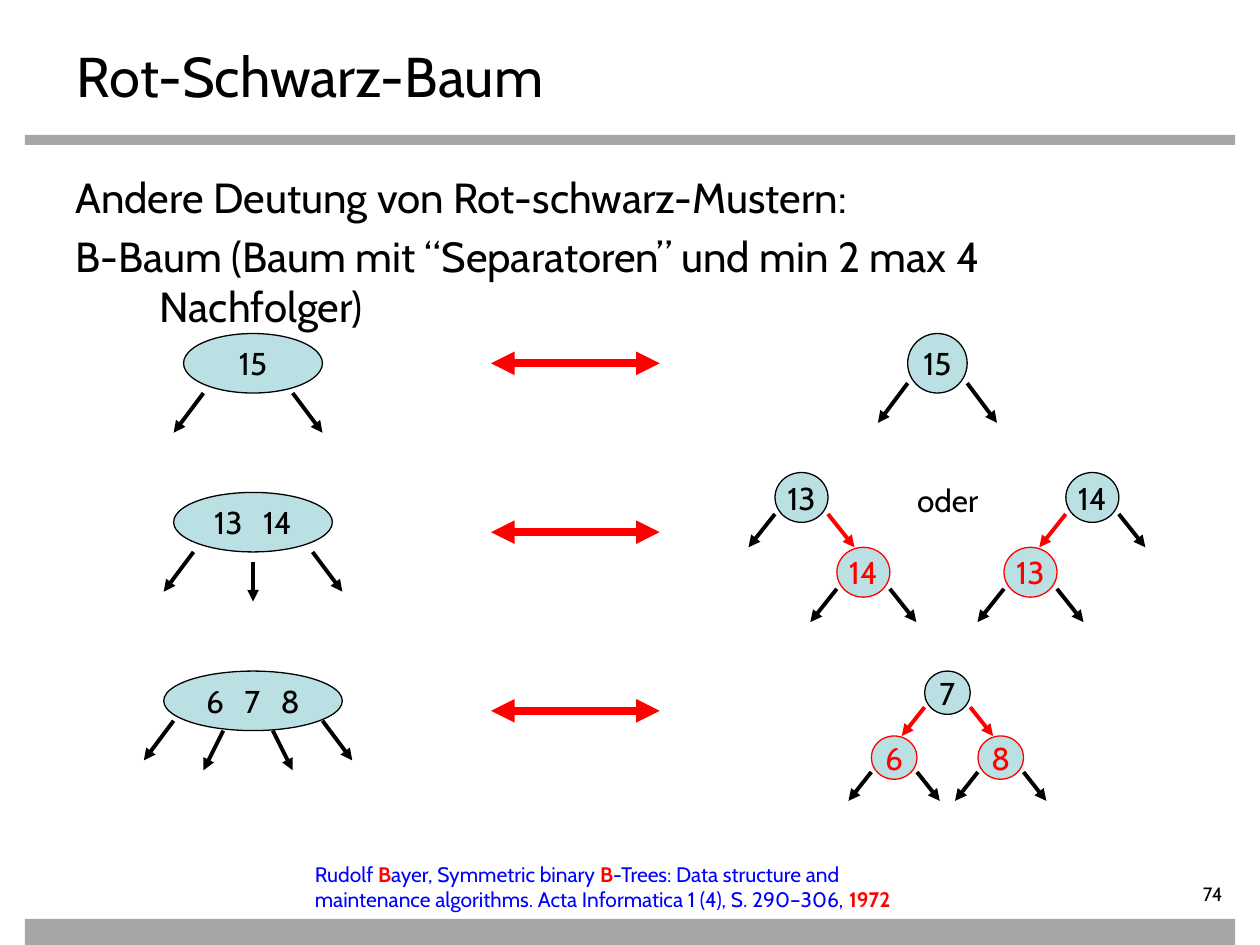
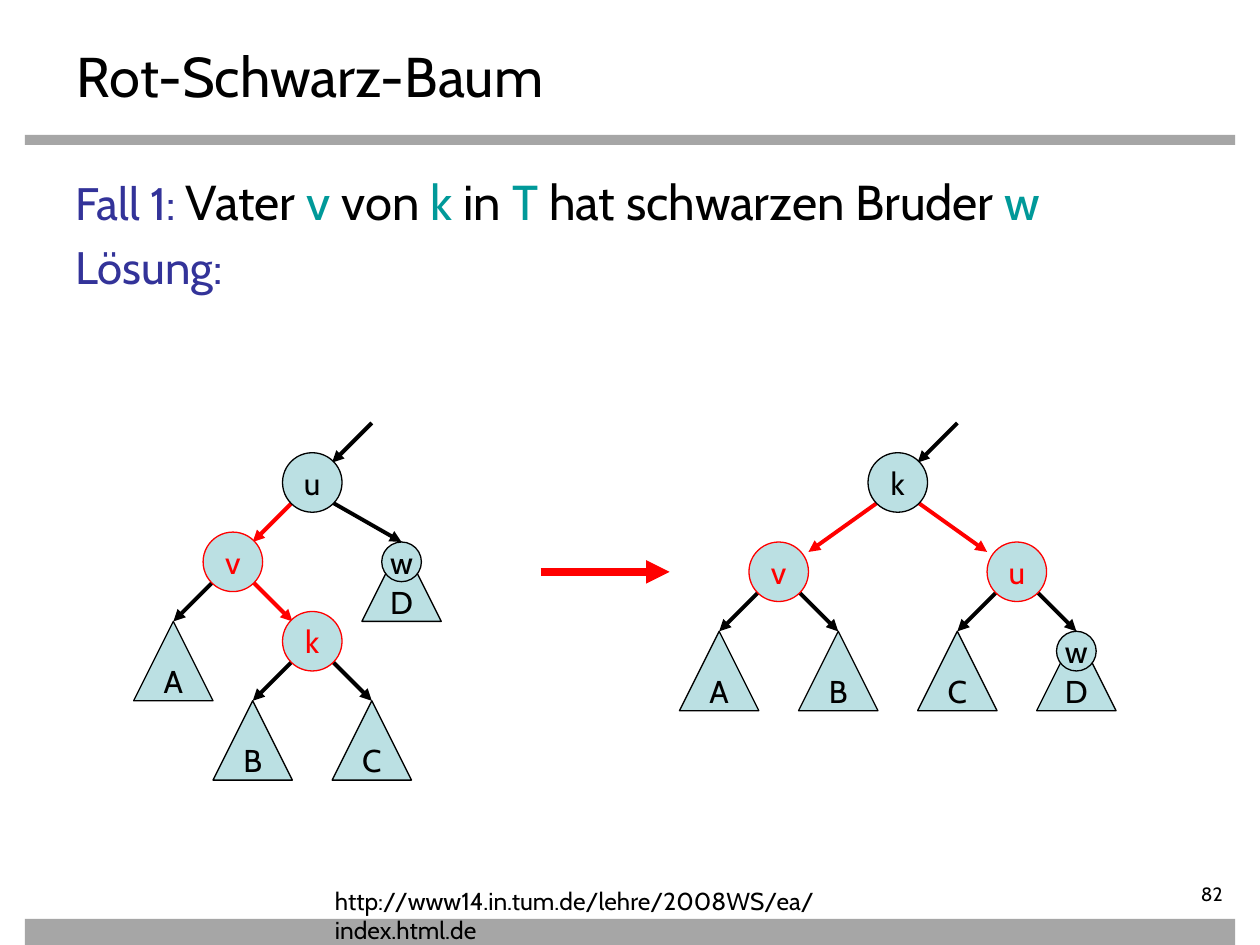
from lxml.etree import SubElement
from pptx import Presentation
from pptx.dml.color import RGBColor
from pptx.enum.shapes import MSO_CONNECTOR, MSO_SHAPE
from pptx.enum.text import MSO_ANCHOR, PP_ALIGN
from pptx.oxml.ns import qn
from pptx.util import Pt

FONT = "Cabin"
BLACK, RED, BLUE = "000000", "FF0000", "0000FF"
INDIGO, TEAL, GREY, AQUA = "333399", "009999", "A6A6A6", "BBE0E3"
GRID = 5.67


def rgb(value):
    return RGBColor.from_string(value)


def style(run, size, colour=BLACK, bold=False):
    run.font.name = FONT
    run.font.size = Pt(size)
    run.font.bold = bold
    run.font.color.rgb = rgb(colour)


def add_runs(paragraph, pieces):
    for words, *look in pieces:
        run = paragraph.add_run()
        run.text = words
        style(run, *look)


def text_area(slide, left, top, width, height, paragraphs, wrap=True):
    frame = slide.shapes.add_textbox(Pt(left), Pt(top), Pt(width), Pt(height)).text_frame
    frame.word_wrap = wrap
    for index, pieces in enumerate(paragraphs):
        paragraph = frame.add_paragraph() if index else frame.paragraphs[0]
        add_runs(paragraph, pieces)
    return frame


def body(slide, paragraphs, indent, gap):
    frame = text_area(slide, 36, 94.5, 648, 391, paragraphs)
    for index, paragraph in enumerate(frame.paragraphs):
        properties = paragraph._p.get_or_add_pPr()
        properties.set("marL", str(Pt(indent)))
        properties.set("indent", str(-Pt(indent)))
        if index:
            paragraph.space_before = Pt(gap)


def band(slide, top, height):
    bar = slide.shapes.add_shape(MSO_SHAPE.RECTANGLE, Pt(14.2), Pt(top), Pt(691.7), Pt(height))
    bar.shadow.inherit = False
    bar.fill.solid()
    bar.fill.fore_color.rgb = rgb(GREY)
    bar.line.fill.background()


def start_slide(deck, number):
    slide = deck.slides.add_slide(deck.slide_layouts[6])
    band(slide, 77.1, 5.7)
    band(slide, 525, 15)
    page = text_area(slide, 626.4, 504, 79.4, 16, [[(number, 11)]])
    page.margin_left = page.margin_top = page.margin_bottom = 0
    page.paragraphs[0].alignment = PP_ALIGN.RIGHT
    text_area(slide, 36.9, 20.2, 648, 39.6, [[("Rot-Schwarz-Baum", 32)]])
    return slide


def node(slide, centre, top, width, height, label, colour=BLACK, kind=MSO_SHAPE.OVAL):
    shape = slide.shapes.add_shape(kind, Pt(centre - width / 2), Pt(top), Pt(width), Pt(height))
    shape.shadow.inherit = False
    shape.fill.solid()
    shape.fill.fore_color.rgb = rgb(AQUA)
    shape.line.color.rgb = rgb(colour)
    shape.line.width = Pt(0.75)
    frame = shape.text_frame
    frame.word_wrap = False
    frame.vertical_anchor = MSO_ANCHOR.MIDDLE
    paragraph = frame.paragraphs[0]
    paragraph.alignment = PP_ALIGN.CENTER
    for index, key in enumerate(label.split()):
        if index:
            add_runs(paragraph, [(" ", 18, colour)])
            paragraph.runs[-1]._r.get_or_add_rPr().set("spc", "760")
        add_runs(paragraph, [(key, 18, colour)])


def arrow(slide, x1, y1, x2, y2, colour=BLACK, width=2.25, double=False):
    line = slide.shapes.add_connector(MSO_CONNECTOR.STRAIGHT, Pt(x1), Pt(y1), Pt(x2), Pt(y2))
    line.line.color.rgb = rgb(colour)
    line.line.width = Pt(width)
    outline = line.line._get_or_add_ln()
    for end in ("headEnd", "tailEnd") if double else ("tailEnd",):
        SubElement(outline, qn(f"a:{end}")).set("type", "triangle")
    SubElement(line._element.spPr, qn("a:effectLst"))


def b_tree_node(slide, centre, top, width, keys, pointers):
    node(slide, centre, top, width * GRID, 6 * GRID, keys)
    for x1, y1, x2, y2 in pointers:
        arrow(slide, centre + x1 * GRID, top + y1 * GRID, centre + x2 * GRID, top + y2 * GRID)


def red_black_tree(slide, centre, top, sx, sy, tree, colour=BLACK):
    key, *children = tree
    node(slide, centre, top, 6 * sx, 6 * sy, key, colour)
    for side, child in zip((-1, 1), children):
        arrow(slide, centre + side * 3 * sx, top + 5 * sy,
              centre + side * 6 * sx, top + 9 * sy, RED if child else BLACK)
        if child:
            red_black_tree(slide, centre + side * 7 * sx, top + 9 * sy, sx, sy, child, RED)


def rotation_tree(slide, left, top, circles, subtrees, edges):
    for x1, y1, x2, y2, colour in edges:
        arrow(slide, left + x1 * GRID, top + y1 * GRID, left + x2 * GRID, top + y2 * GRID, colour)
    for label, x, y in subtrees:
        node(slide, left + x * GRID, top + y * GRID, 8 * GRID, 8 * GRID, label,
             kind=MSO_SHAPE.ISOSCELES_TRIANGLE)
    for label, x, y, size, colour in circles:
        node(slide, left + x * GRID, top + (y - size / 2) * GRID,
             size * GRID, size * GRID, label, colour)


def leaf(key):
    return key, None, None


def b_tree_slide(deck):
    slide = start_slide(deck, "74")
    body(slide, [
        [("Andere Deutung von Rot-schwarz-Mustern:", 24)],
        [("B-Baum (Baum mit “Separatoren” und min 2 max 4 Nachfolger)", 24)],
    ], 48.2, 4.8)
    rows = [
        (190.6, 14, "15", 3, [(-5, 6, -8, 10), (4, 6, 7, 10)]),
        (281.4, 16, "13 14", 4, [(-6, 6, -9, 10), (0, 7, 0, 11), (6, 6, 9, 10)]),
        (383.5, 18, "6 7 8", 4,
         [(-8, 5, -11, 9), (-3, 6, -5, 10), (2, 6, 4, 10), (7, 5, 10, 9)]),
    ]
    for top, width, keys, middle, pointers in rows:
        b_tree_node(slide, 144.6, top, width, keys, pointers)
        level = top + middle * GRID
        arrow(slide, 280.6, level, 377, level, RED, 4.5, True)
    equivalents = [
        (535.7, 190.6, GRID, GRID, leaf("15")),
        (458, 270, 5.05, 4.75, ("13", None, leaf("14"))),
        (624.2, 270, 5.05, 4.75, ("14", leaf("13"), None)),
        (541.4, 383.5, 4.35, 4.12, ("7", leaf("6"), leaf("8"))),
    ]
    for centre, top, sx, sy, tree in equivalents:
        red_black_tree(slide, centre, top, sx, sy, tree)
    text_area(slide, 517, 271.4, 50.4, 28.8, [[("oder", 18)]], wrap=False)
    text_area(slide, 172.8, 488.9, 382.3, 36, [[
        ("Rudolf ", 12, BLUE),
        ("B", 12, RED, True),
        ("ayer, Symmetric binary ", 12, BLUE),
        ("B", 12, RED, True),
        ("-Trees: Data structure and maintenance algorithms. "
         "Acta Informatica 1 (4), S. 290–306, ", 12, BLUE),
        ("1972", 12, RED, True),
    ]])


def rotation_slide(deck):
    slide = start_slide(deck, "82")
    body(slide, [
        [("Fall 1: ", 26, INDIGO), ("Vater ", 28), ("v", 28, TEAL), (" von ", 28),
         ("k ", 28, TEAL), ("in ", 28), ("T", 28, TEAL),
         (" hat schwarzen Bruder ", 28), ("w", 28, TEAL)],
        [("Lösung:", 26, INDIGO)],
    ], 27, 5.2)
    rotation_tree(
        slide, 76.4, 241.7,
        [("u", 18, 6, 6, BLACK), ("v", 10, 14, 6, RED),
         ("k", 18, 22, 6, RED), ("w", 27, 14, 4, BLACK)],
        [("A", 4, 20), ("B", 12, 28), ("C", 24, 28), ("D", 27, 12)],
        [(24, 0, 20, 4, BLACK), (16, 8, 12, 12, RED), (20, 8, 27, 12, BLACK),
         (8, 16, 4, 20, BLACK), (12, 16, 16, 20, RED),
         (16, 24, 12, 28, BLACK), (20, 24, 24, 28, BLACK)])
    arrow(slide, 309, 326.8, 382.7, 326.8, RED, 4.5)
    rotation_tree(
        slide, 388.3, 241.7,
        [("k", 22, 6, 6, BLACK), ("v", 10, 15, 6, RED),
         ("u", 34, 15, 6, RED), ("w", 40, 23, 4, BLACK)],
        [(label, 4 + 12 * index, 21) for index, label in enumerate("ABCD")],
        [(28, 0, 24, 4, BLACK), (20, 8, 13, 13, RED), (24, 8, 31, 13, RED)]
        + [(parent + side * 2, 17, parent + side * 6, 21, BLACK)
           for parent in (10, 34) for side in (-1, 1)])
    text_area(slide, 184.3, 502.6, 360, 24.5,
              [[("http://www14.in.tum.de/lehre/2008WS/ea/index.html.de", 14)]])


def main():
    deck = Presentation()
    deck.slide_width, deck.slide_height = Pt(720), Pt(540)
    b_tree_slide(deck)
    rotation_slide(deck)
    deck.save("out.pptx")


if __name__ == "__main__":
    main()
